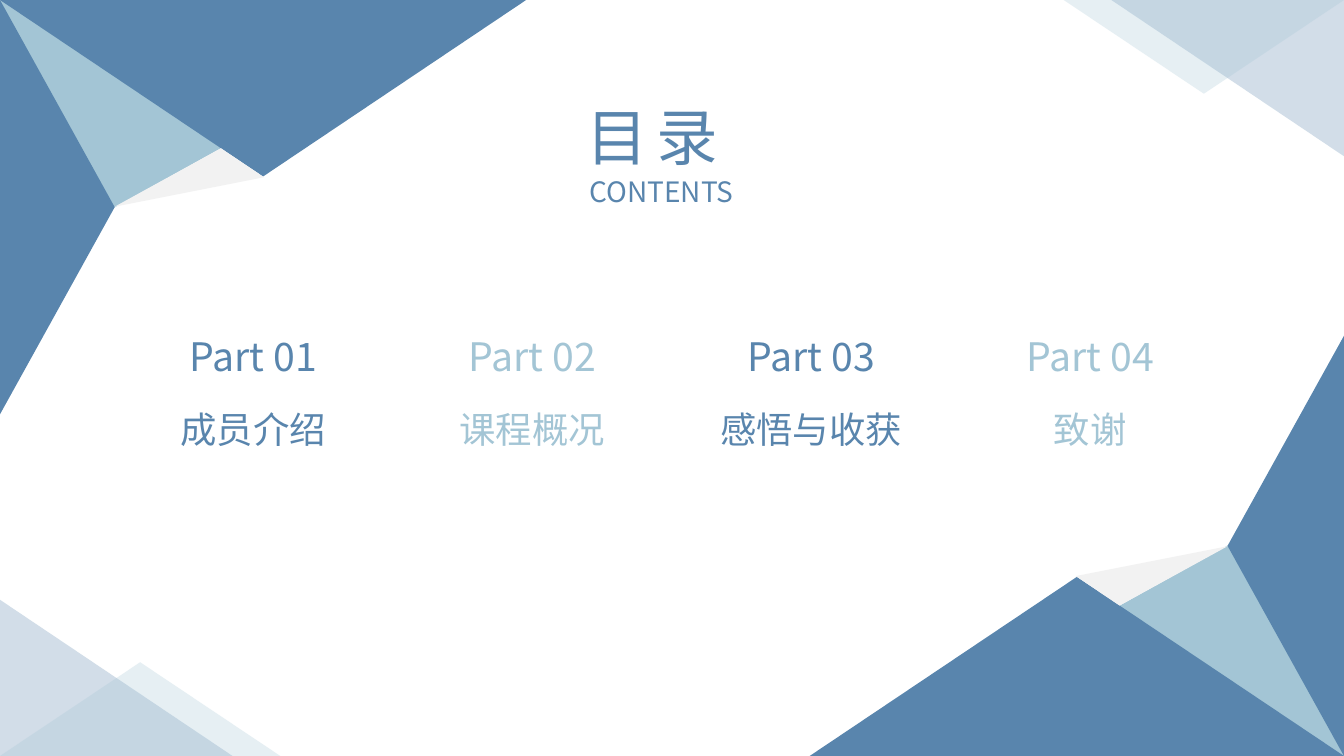
import pptx
import pptx.util
from dataclasses import dataclass
from lxml import etree
from pptx.dml.color import RGBColor
from pptx.enum.shapes import MSO_SHAPE
from pptx.enum.text import MSO_AUTO_SIZE, PP_ALIGN
from pptx.oxml.ns import qn

Pt = pptx.util.Pt


@dataclass(frozen=True)
class Theme:
    font: str = "Noto Sans CJK SC"
    deep: str = "5985AD"
    pale: str = "A3C5D5"
    fold: str = "F2F2F2"
    veil: int = 27
    title_size: int = 44
    subtitle_size: int = 20
    part_size: int = 28
    topic_size: int = 26
    title_spacing: int = 6


THEME = Theme()
SLIDE_WIDTH, SLIDE_HEIGHT = 960, 540
TOPICS = ["成员介绍", "课程概况", "感悟与收获", "致谢"]


def paint(shape, color, opacity=100):
    shape.shadow.inherit = False
    shape.fill.solid()
    shape.fill.fore_color.rgb = RGBColor.from_string(color)
    shape.line.fill.background()
    if opacity < 100:
        tint = shape.element.spPr.find(qn("a:solidFill")).find(qn("a:srgbClr"))
        etree.SubElement(tint, qn("a:alpha"), val=str(opacity * 1000))


def add_facet(shapes, kind, box, rotation, color, opacity=100):
    left, top, width, height = box
    center_x, center_y = left + width / 2, top + height / 2
    if rotation % 180:
        width, height = height, width
    facet = shapes.add_shape(kind, Pt(center_x - width / 2), Pt(center_y - height / 2),
                             Pt(width), Pt(height))
    facet.rotation = rotation
    paint(facet, color, opacity)


def corner_part(box, share_x, share_y, right, bottom):
    left, top, width, height = box
    part_width, part_height = width * share_x, height * share_y
    return (left + (width - part_width) * right, top + (height - part_height) * bottom,
            part_width, part_height)


def add_folded_corner(slide, box, turned):
    shapes = slide.shapes.add_group_shape().shapes
    left, top, width, height = box
    turn = 180 if turned else 0
    for kind, share_x, share_y, rotation, color in [
        (MSO_SHAPE.RIGHT_TRIANGLE, 0.925, 0.655, 90, THEME.pale),
        (MSO_SHAPE.ISOSCELES_TRIANGLE, 1, 0.426, 180, THEME.deep),
        (MSO_SHAPE.ISOSCELES_TRIANGLE, 0.218, 1, 90, THEME.deep),
    ]:
        part = corner_part(box, share_x, share_y, turned, turned)
        add_facet(shapes, kind, part, (rotation + turn) % 360, color)

    fold_shares = [(0.42, 0.358), (0.502, 0.428), (0.218, 0.499)]
    if turned:
        fold_shares = [(1 - x, 1 - y) for x, y in fold_shares]
    fold_points = [(Pt(left + width * x), Pt(top + height * y)) for x, y in fold_shares]
    outline = shapes.build_freeform(*fold_points[0])
    outline.add_line_segments(fold_points[1:], close=True)
    paint(outline.convert_to_shape(), THEME.fold)


def add_veiled_corner(slide, box, turned):
    shapes = slide.shapes.add_group_shape().shapes
    for kind, share_x, share_y, color in [
        (MSO_SHAPE.RIGHT_TRIANGLE, 0.83, 1, THEME.deep),
        (MSO_SHAPE.ISOSCELES_TRIANGLE, 1, 0.6, THEME.pale),
    ]:
        part = corner_part(box, share_x, share_y, turned, not turned)
        add_facet(shapes, kind, part, 180 if turned else 0, color, THEME.veil)


def add_label(shapes, box, wording, size, color, align, spacing=0):
    label = shapes.add_textbox(*map(Pt, box))
    frame = label.text_frame
    frame.word_wrap = True
    frame.auto_size = MSO_AUTO_SIZE.SHAPE_TO_FIT_TEXT
    paragraph = frame.paragraphs[0]
    paragraph.alignment = align
    run = paragraph.add_run()
    run.text = wording
    run.font.name = THEME.font
    run.font.size = Pt(size)
    run.font.color.rgb = RGBColor.from_string(color)
    properties = run.font._element
    etree.SubElement(properties, qn("a:ea"), typeface=THEME.font)
    if spacing:
        properties.set("spc", str(spacing * 100))


def add_heading(slide, box):
    left, top, width, height = box
    add_label(slide.shapes, (left + 2.2, top + 54, 129.6, 31.7), "CONTENTS",
              THEME.subtitle_size, THEME.deep, PP_ALIGN.JUSTIFY)
    add_label(slide.shapes, (left, top, width, 60.5), "目录",
              THEME.title_size, THEME.deep, PP_ALIGN.JUSTIFY, THEME.title_spacing)


def add_agenda(slide, box):
    shapes = slide.shapes.add_group_shape().shapes
    left, top, width, height = box
    part_width, part_height = 208, 41
    topic_width, topic_height = 201.6, 38.9
    pitch = (width - part_width) / (len(TOPICS) - 1)
    for index, topic in enumerate(TOPICS):
        color = THEME.pale if index % 2 else THEME.deep
        column = left + index * pitch
        add_label(shapes, (column, top, part_width, part_height), f"Part {index + 1:02d}",
                  THEME.part_size, color, PP_ALIGN.CENTER)
        topic_left = column + (part_width - topic_width) / 2
        add_label(shapes, (topic_left, top + height - topic_height, topic_width, topic_height),
                  topic, THEME.topic_size, color, PP_ALIGN.CENTER)


def add_contents_slide(deck):
    slide = deck.slides.add_slide(deck.slide_layouts[6])
    add_folded_corner(slide, (0, 0, 375.8, 295.9), False)
    add_folded_corner(slide, (SLIDE_WIDTH - 381.6, SLIDE_HEIGHT - 300.2, 381.6, 300.2), True)
    add_veiled_corner(slide, (0, SLIDE_HEIGHT - 111.6, 200.2, 111.6), False)
    add_veiled_corner(slide, (SLIDE_WIDTH - 200.2, 0, 200.2, 111.6), True)
    add_agenda(slide, (77, 234, 805.7, 92.2))
    add_heading(slide, (411.8, 67, 136, 85.7))


def main():
    deck = pptx.Presentation()
    deck.slide_width, deck.slide_height = Pt(SLIDE_WIDTH), Pt(SLIDE_HEIGHT)
    add_contents_slide(deck)
    deck.save("out.pptx")


if __name__ == "__main__":
    main()
